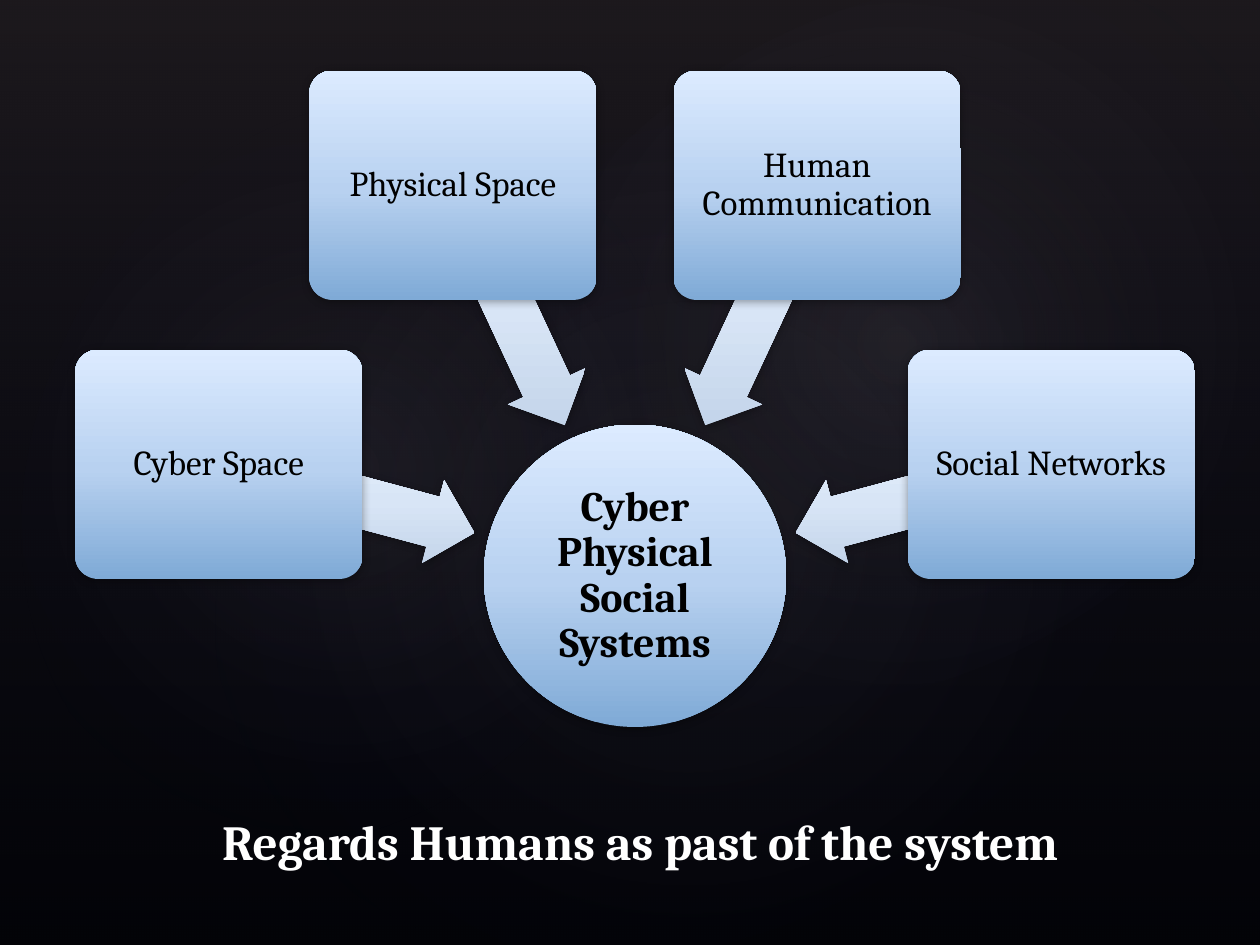
from math import cos, radians, sin

from lxml.etree import SubElement
from pptx import Presentation
from pptx.dml.color import RGBColor
from pptx.enum.shapes import MSO_SHAPE as Shape
from pptx.enum.text import MSO_ANCHOR as Anchor, PP_ALIGN as Align
from pptx.oxml.ns import qn
from pptx.util import Inches, Pt

# Content
STATEMENT = "Regards Humans as past of the system"
HUB = "Cyber Physical Social Systems"
SPACES = ["Cyber Space", "Physical Space", "Human Communication", "Social Networks"]

# Gradient stops: position %, colour, opacity %
THEME = {
    "font": "Cambria",
    "background": "000000",
    "veil": [(0, "504652", 36), (100, "242852", 10)],
    "node": [(0, "7FAAD6", 100), (48, "B8D1F0", 100), (100, "DCEBFF", 100)],
    "arrow": [(0, "C0D2E8", 100), (48, "D8E5F6", 100), (100, "EAF3FF", 100)],
    "statement": {"size": 28, "color": "FFFFFF", "bold": True},
    "hub": {"size": 24, "color": "000000", "bold": True},
    "card": {"size": 20, "color": "000000", "bold": False},
}
# Backdrop glows: left, top, width, height, rotation, opacity %
GLOWS = [
    (1.5, 1.14, 7.92, 6.24, 328.7, 7),
    (-0.3, 1.28, 6.06, 4.9, 294.3, 8),
    (3.58, 0.13, 7.09, 5.2, 328.7, 8),
]

# Radial layout: spaces sit on an arc around the hub
HUB_X, HUB_Y, HUB_SIZE = 5.04, 4.57, 2.4
FIRST_ANGLE, ANGLE_STEP = 195, 50
ARROW_RADIUS, ARROW_SIZE = 2.37, (2.1, 0.68)
CARD_RADIUS, CARD_SIZE = 3.42, (2.28, 1.82)


def set_gradient(shape, stops, angle=None):
    """Linear gradient at an angle, or a circular one when there is none."""
    shape.fill.background()
    properties = shape._element.spPr
    gradient = SubElement(properties, qn("a:gradFill"), rotWithShape="0")
    stop_list = SubElement(gradient, qn("a:gsLst"))
    for position, color, opacity in stops:
        stop = SubElement(stop_list, qn("a:gs"), pos=str(position * 1000))
        value = SubElement(stop, qn("a:srgbClr"), val=color)
        if opacity < 100:
            SubElement(value, qn("a:alpha"), val=str(opacity * 1000))
    if angle is None:
        path = SubElement(gradient, qn("a:path"), {"path": "circle"})
        SubElement(path, qn("a:fillToRect"), {side: "50000" for side in "ltrb"})
    else:
        SubElement(gradient, qn("a:lin"), ang=str(angle * 60000), scaled="0")
    properties.replace(properties.find(qn("a:noFill")), gradient)


def add_shape(shapes, kind, frame, stops, angle=None, rotation=0):
    shape = shapes.add_shape(kind, *map(Inches, frame))
    shape.rotation = rotation
    set_gradient(shape, stops, angle)
    shape.line.fill.background()
    shape.shadow.inherit = False
    return shape


def add_shadow(shape):
    effects = shape._element.spPr.find(qn("a:effectLst"))
    shadow = SubElement(effects, qn("a:outerShdw"), blurRad=str(Pt(5)),
                        dist=str(Pt(1)), dir="5400000", rotWithShape="0")
    color = SubElement(shadow, qn("a:srgbClr"), val="000000")
    SubElement(color, qn("a:alpha"), val="32000")


def write(box, text, style, inset=None, line_spacing=None):
    frame = box.text_frame
    frame.word_wrap, frame.vertical_anchor = True, Anchor.MIDDLE
    if inset is not None:
        for side in ("left", "top", "right", "bottom"):
            setattr(frame, f"margin_{side}", Inches(inset))
    para = frame.paragraphs[0]
    para.alignment, para.line_spacing = Align.CENTER, line_spacing
    para.space_before = Pt(0)
    span = para.add_run()
    span.text = text
    values = {"name": THEME["font"], "size": Pt(style["size"]), "bold": style["bold"]}
    for name, value in values.items():
        setattr(span.font, name, value)
    span.font.color.rgb = RGBColor.from_string(style["color"])


def centred(x, y, width, height):
    return x - width / 2, y - height / 2, width, height


def on_arc(angle, radius, size):
    turn = radians(angle)
    return centred(HUB_X + radius * cos(turn), HUB_Y + radius * sin(turn), *size)


def add_backdrop(deck, page):
    """Build the veil and glows, then hand them to the slide master."""
    fill = deck.slide_master.background.fill
    fill.solid()
    fill.fore_color.rgb = RGBColor.from_string(THEME["background"])
    parts = [add_shape(page.shapes, Shape.RECTANGLE, (0, 0, 10, 7.5), THEME["veil"], 90)]
    for *frame, rotation, opacity in GLOWS:
        stops = [(0, "C4BCC6", opacity), (58, "242852", 0)]
        parts.append(add_shape(page.shapes, Shape.OVAL, frame, stops, rotation=rotation))
    for part in parts:
        deck.slide_master.shapes._spTree.append(part._element)


def add_diagram(page):
    shapes = page.shapes.add_group_shape().shapes
    hub = add_shape(shapes, Shape.OVAL, centred(HUB_X, HUB_Y, HUB_SIZE, HUB_SIZE),
                    THEME["node"], 270)
    add_shadow(hub)
    write(hub, HUB, THEME["hub"], 0.02, 0.9)

    for index, label in enumerate(SPACES):
        angle = FIRST_ANGLE + index * ANGLE_STEP
        arrow = add_shape(shapes, Shape.LEFT_ARROW, on_arc(angle, ARROW_RADIUS, ARROW_SIZE),
                          THEME["arrow"], 270, angle)
        arrow.adjustments[0], arrow.adjustments[1] = 0.6, 0.5
        card = add_shape(shapes, Shape.ROUNDED_RECTANGLE,
                         on_arc(angle, CARD_RADIUS, CARD_SIZE), THEME["node"], 270)
        card.adjustments[0] = 0.1
        for shape in (arrow, card):
            add_shadow(shape)
        write(card, label, THEME["card"], 0.04, 0.9)


def main():
    deck = Presentation()
    deck.slide_width, deck.slide_height = Inches(10), Inches(7.5)
    page = deck.slides.add_slide(deck.slide_layouts.get_by_name("Section Header"))
    add_backdrop(deck, page)

    # Statement in the body placeholder; the slide has no title
    title = page.shapes.title._element
    title.getparent().remove(title)
    statement = page.placeholders[1]
    statement.left, statement.top = Inches(0.68), Inches(6.28)
    statement.width, statement.height = Inches(8.8), Inches(0.79)
    write(statement, STATEMENT, THEME["statement"])

    add_diagram(page)
    deck.save("out.pptx")


if __name__ == "__main__":
    main()
